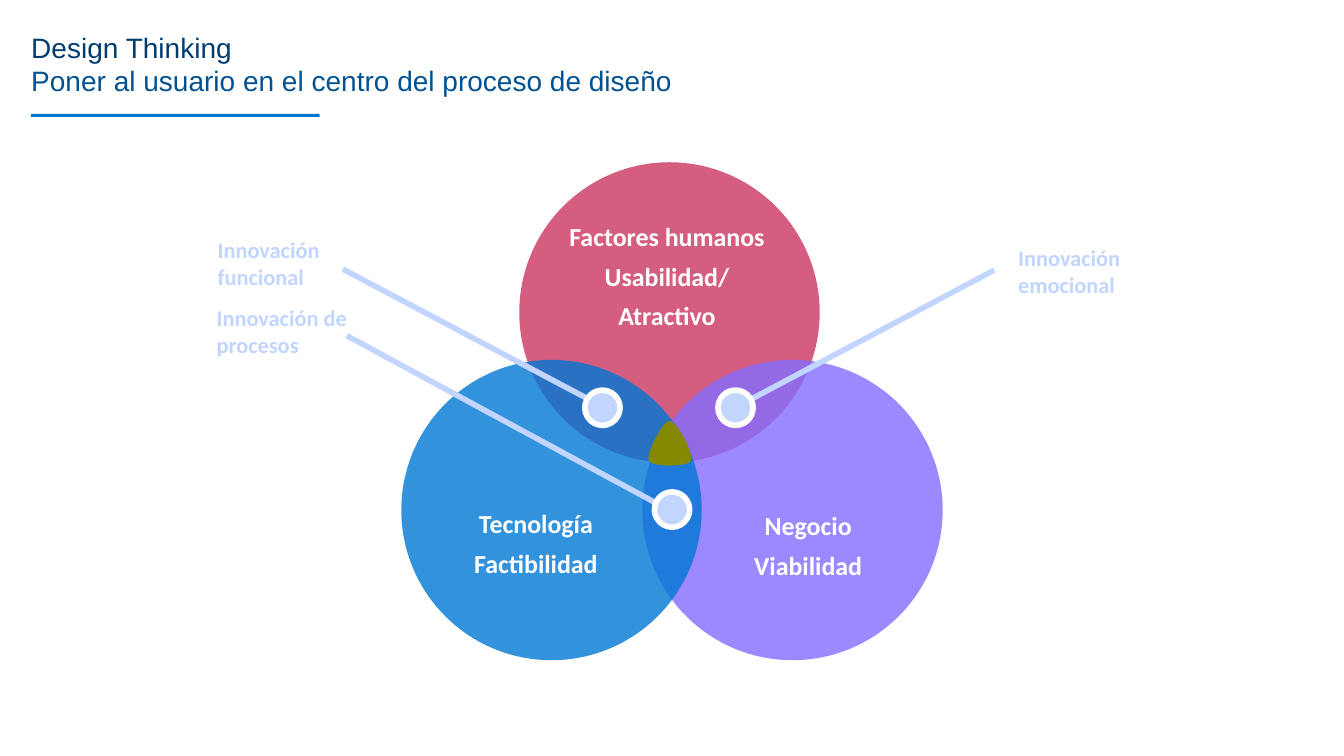
from dataclasses import dataclass

import lxml.etree
import pptx
import pptx.dml.color
import pptx.enum.shapes
import pptx.enum.text
import pptx.oxml.ns
import pptx.util

SLIDE_WIDTH = pptx.util.Inches(13.33)
SLIDE_HEIGHT = pptx.util.Inches(7.5)
COLUMN = SLIDE_WIDTH / 133.3
ROW = SLIDE_HEIGHT / 75
CIRCLE_SIZE = 29.8
DOT_SIZE = 3.5
CURVE_STEPS = 16

COLORS = {
    "title": "003C70",
    "subtitle": "005192",
    "technology": "0077D4",
    "human": "CE4169",
    "business": "846CFF",
    "centre": "858900",
    "innovation": "C1D5FF",
    "white": "FFFFFF",
}
ALIGN = pptx.enum.text.PP_ALIGN
ANCHOR = pptx.enum.text.MSO_ANCHOR
OVAL = pptx.enum.shapes.MSO_SHAPE.OVAL
RECTANGLE = pptx.enum.shapes.MSO_SHAPE.RECTANGLE

FORMATS = {
    "circle": {
        "font": {"name": "Calibri", "size": pptx.util.Pt(18.5), "bold": True},
        "paragraph": {"alignment": ALIGN.CENTER, "space_after": pptx.util.Pt(6)},
    },
    "innovation": {
        "font": {"name": "Calibri", "size": pptx.util.Pt(16), "bold": True},
        "paragraph": {"alignment": ALIGN.LEFT, "space_after": pptx.util.Pt(6)},
    },
    "title": {
        "font": {"name": "Arial", "size": pptx.util.Pt(20), "bold": False},
        "paragraph": {"alignment": ALIGN.LEFT},
        "frame": {
            "margin_left": 0, "margin_right": 0, "margin_top": 0,
            "margin_bottom": 0, "vertical_anchor": ANCHOR.MIDDLE,
        },
    },
}


@dataclass(frozen=True)
class Box:
    column: float
    row: float
    columns: float
    rows: float

    def lengths(self) -> list[int]:
        return [
            round(self.column * COLUMN), round(self.row * ROW),
            round(self.columns * COLUMN), round(self.rows * ROW),
        ]


@dataclass(frozen=True)
class Circle:
    column: float
    row: float
    color: str
    opacity: int


@dataclass(frozen=True)
class Label:
    box: Box
    lines: tuple[tuple[str, str], ...]
    format_name: str


@dataclass(frozen=True)
class Pointer:
    start: tuple[float, float]
    end: tuple[float, float]
    dot: tuple[float, float]


CIRCLES = [
    Circle(51.5, 16.1, "human", 85),
    Circle(63.7, 35.7, "business", 80),
    Circle(39.8, 35.7, "technology", 80),
]
TITLE = Label(
    Box(3.1, 3, 127, 6.7),
    (("Design Thinking", "title"),
     ("Poner al usuario en el centro del proceso de diseño", "subtitle")),
    "title",
)
CIRCLE_LABELS = [
    Label(Box(55, 21.4, 22.3, 19.6),
          (("Factores humanos", "white"), ("Usabilidad/", "white"), ("Atractivo", "white")),
          "circle"),
    Label(Box(67.9, 50.1, 24.5, 7.2),
          (("Negocio", "white"), ("Viabilidad", "white")), "circle"),
    Label(Box(40.9, 49.9, 24.5, 7.2),
          (("Tecnología", "white"), ("Factibilidad", "white")), "circle"),
]
INNOVATION_LABELS = [
    Label(Box(column, row, 15.1, 6.4), ((text, "innovation"),), "innovation")
    for column, row, text in [
        (20.5, 29.7, "Innovación de procesos"),
        (20.6, 22.9, "Innovación funcional"),
        (100, 23.7, "Innovación emocional"),
    ]
]
POINTERS = [
    Pointer((34.4, 33.3), (66.9, 50.9), (64.9, 48.8)),
    Pointer((34, 26.7), (59.7, 40.3), (58, 38.7)),
    Pointer((98.6, 26.8), (73, 40.4), (71.2, 38.7)),
]
CENTRE_CURVES = [
    ((66.4, 41.8), (67.1, 41.8), (68.8, 45), (68.5, 45.7)),
    ((68.5, 45.7), (68.1, 46.3), (64.8, 46.3), (64.4, 45.7)),
    ((64.4, 45.7), (64.1, 45), (65.8, 41.8), (66.4, 41.8)),
]


def rgb(name: str) -> pptx.dml.color.RGBColor:
    return pptx.dml.color.RGBColor.from_string(COLORS[name])


def apply_values(target: object, values: dict) -> None:
    for name, value in values.items():
        setattr(target, name, value)


def paint(shape, fill: str, line: str | None = None, width: float = 0) -> None:
    shape.shadow.inherit = False
    shape.fill.solid()
    shape.fill.fore_color.rgb = rgb(fill)
    if line is None:
        shape.line.fill.background()
    else:
        shape.line.color.rgb = rgb(line)
        shape.line.width = pptx.util.Pt(width)


def draw_circle(slide, circle: Circle) -> None:
    box = Box(circle.column, circle.row, CIRCLE_SIZE, CIRCLE_SIZE)
    shape = slide.shapes.add_shape(OVAL, *box.lengths())
    paint(shape, circle.color)
    color = shape.fill._xPr.find(".//" + pptx.oxml.ns.qn("a:srgbClr"))
    alpha = lxml.etree.SubElement(color, pptx.oxml.ns.qn("a:alpha"))
    alpha.set("val", str(circle.opacity * 1000))


def draw_label(slide, label: Label) -> None:
    formats = FORMATS[label.format_name]
    frame = slide.shapes.add_textbox(*label.box.lengths()).text_frame
    frame.word_wrap = True
    apply_values(frame, formats.get("frame", {}))
    for index, (text, color) in enumerate(label.lines):
        paragraph = frame.add_paragraph() if index else frame.paragraphs[0]
        apply_values(paragraph, formats["paragraph"])
        run = paragraph.add_run()
        run.text = text
        apply_values(run.font, formats["font"])
        run.font.color.rgb = rgb(color)


def draw_centre(slide) -> None:
    points = []
    for curve in CENTRE_CURVES:
        for step in range(CURVE_STEPS):
            t = step / CURVE_STEPS
            weights = ((1 - t) ** 3, 3 * t * (1 - t) ** 2, 3 * t**2 * (1 - t), t**3)
            x, y = (sum(w * p[axis] for w, p in zip(weights, curve)) for axis in (0, 1))
            points.append((x * COLUMN, y * ROW))
    builder = slide.shapes.build_freeform(*points[0])
    builder.add_line_segments(points[1:], close=True)
    paint(builder.convert_to_shape(), "centre", "centre", 0.5)


def draw_line(slide, pointer: Pointer) -> None:
    ends = [
        round(length)
        for column, row in (pointer.start, pointer.end)
        for length in (column * COLUMN, row * ROW)
    ]
    connector = slide.shapes.add_connector(pptx.enum.shapes.MSO_CONNECTOR.STRAIGHT, *ends)
    connector.line.color.rgb = rgb("innovation")
    connector.line.width = pptx.util.Pt(4)
    lxml.etree.SubElement(connector._element.spPr, pptx.oxml.ns.qn("a:effectLst"))


def draw_dot(slide, pointer: Pointer) -> None:
    box = Box(*pointer.dot, DOT_SIZE, DOT_SIZE)
    paint(slide.shapes.add_shape(OVAL, *box.lengths()), "innovation", "white", 4)


def main() -> None:
    presentation = pptx.Presentation()
    presentation.slide_width = SLIDE_WIDTH
    presentation.slide_height = SLIDE_HEIGHT
    slide = presentation.slides.add_slide(presentation.slide_layouts[6])
    underline = slide.shapes.add_shape(RECTANGLE, *Box(3.1, 11.3, 28.6, 0.3).lengths())
    paint(underline, "technology")
    draw_label(slide, TITLE)
    for draw, items in [
        (draw_circle, CIRCLES), (draw_label, CIRCLE_LABELS), (draw_line, POINTERS),
        (draw_label, INNOVATION_LABELS), (draw_dot, POINTERS),
    ]:
        for item in items:
            draw(slide, item)
    draw_centre(slide)
    presentation.save("out.pptx")


if __name__ == "__main__":
    main()
